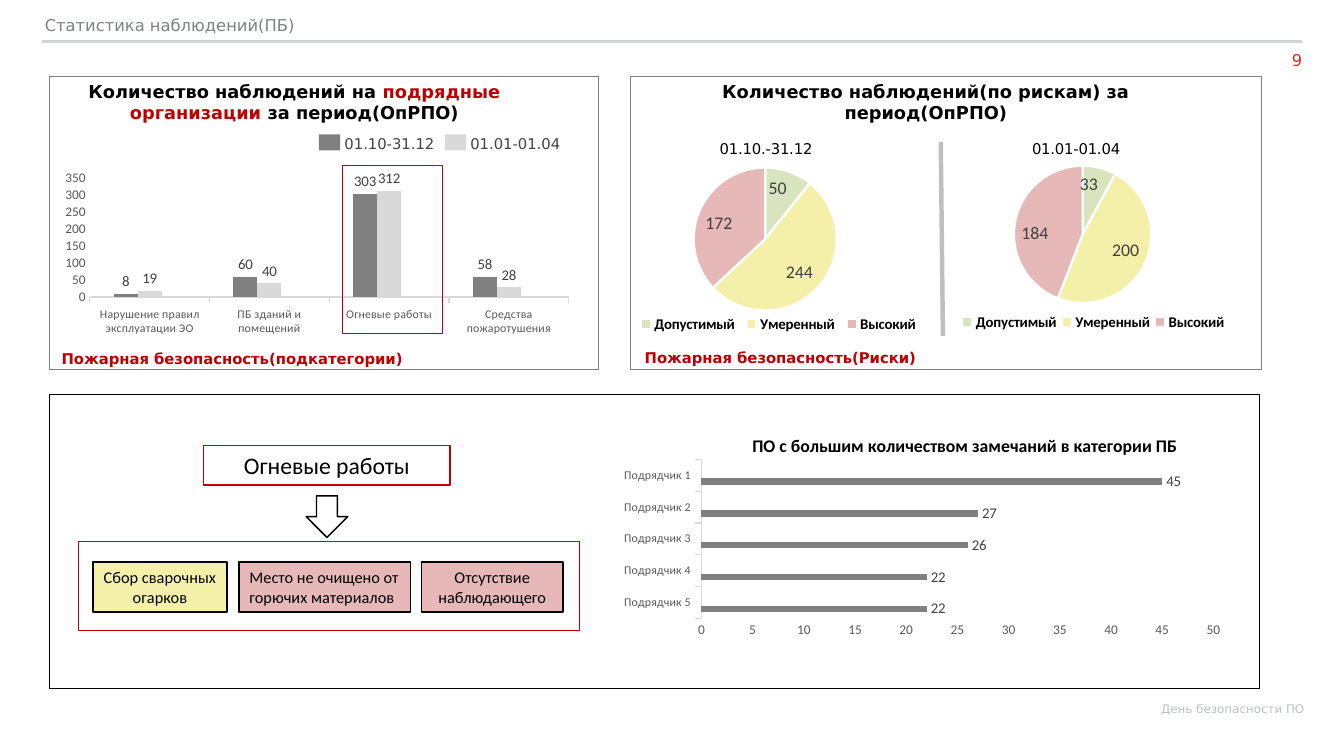
from pptx import Presentation
from pptx.chart.data import CategoryChartData
from pptx.dml.color import RGBColor
from pptx.enum.chart import XL_CHART_TYPE, XL_LABEL_POSITION, XL_LEGEND_POSITION, XL_TICK_MARK
from pptx.enum.shapes import MSO_CONNECTOR, MSO_SHAPE
from pptx.enum.text import MSO_ANCHOR, MSO_AUTO_SIZE, PP_ALIGN
from pptx.oxml import parse_xml
from pptx.oxml.ns import nsdecls, qn
from pptx.util import Inches, Pt

COLUMN, BAR, PIE = XL_CHART_TYPE.COLUMN_CLUSTERED, XL_CHART_TYPE.BAR_CLUSTERED, XL_CHART_TYPE.PIE
OUTSIDE_END, INSIDE_END = XL_LABEL_POSITION.OUTSIDE_END, XL_LABEL_POSITION.INSIDE_END
LEGEND_BOTTOM = XL_LEGEND_POSITION.BOTTOM
TICK_OUT, TICK_NONE = XL_TICK_MARK.OUTSIDE, XL_TICK_MARK.NONE
RECTANGLE, DOWN_ARROW = MSO_SHAPE.RECTANGLE, MSO_SHAPE.DOWN_ARROW
STRAIGHT = MSO_CONNECTOR.STRAIGHT
TOP, MIDDLE = MSO_ANCHOR.TOP, MSO_ANCHOR.MIDDLE
LEFT, CENTER, RIGHT = PP_ALIGN.LEFT, PP_ALIGN.CENTER, PP_ALIGN.RIGHT

SANS, BODY = "DejaVu Sans", "Calibri"
COLORS = {
    "black": "000000", "white": "FFFFFF", "red": "C00000", "number": "E92721",
    "heading": "7F8183", "footer": "BFC0C1", "rule": "D1D5DA", "divider": "BFBFBF",
    "dark": "808080", "light": "D9D9D9", "legend": "424242", "label": "404040",
    "axis": "595959", "green": "D7E4BD", "yellow": "F4F0AA", "pink": "E6B9B8",
}
RISKS = {"Допустимый": "green", "Умеренный": "yellow", "Высокий": "pink"}


def rgb(name):
    return RGBColor.from_string(COLORS[name])


def style_font(font, size, color, name=BODY, bold=False):
    font.size, font.name, font.bold = Pt(size), name, bold
    font.color.rgb = rgb(color)


def fill_text(frame, spans, size, font=SANS, bold=False, align=LEFT, anchor=TOP):
    """Write (text, colour) spans as one paragraph."""
    frame.word_wrap = True
    frame.auto_size = MSO_AUTO_SIZE.NONE
    frame.vertical_anchor = anchor
    para = frame.paragraphs[0]
    para.alignment = align
    for text, color in spans:
        span = para.add_run()
        span.text = text
        style_font(span.font, size, color, font, bold)


def add_text(page, place, spans, size, inset=True, **style):
    frame = page.shapes.add_textbox(*map(Inches, place)).text_frame
    if not inset:
        frame.margin_left = frame.margin_right = frame.margin_top = frame.margin_bottom = 0
    fill_text(frame, spans, size, **style)
    return frame


def add_box(page, place, fill=None, line=None, width=1, kind=RECTANGLE):
    box = page.shapes.add_shape(kind, *map(Inches, place))
    box.shadow.inherit = False
    if fill:
        box.fill.solid()
        box.fill.fore_color.rgb = rgb(fill)
    else:
        box.fill.background()
    if line:
        box.line.color.rgb = rgb(line)
        box.line.width = Pt(width)
    else:
        box.line.fill.background()
    return box


def add_line(page, start, end, color, width):
    line = page.shapes.add_connector(STRAIGHT, *map(Inches, start + end))
    line.line.color.rgb = rgb(color)
    line.line.width = Pt(width)
    line._element.spPr.append(parse_xml(f"<a:effectLst {nsdecls('a')}/>"))


def set_layout(element, inner=False, **fractions):
    """Place a chart part by x, y, w, h as fractions of the chart."""
    for old in element.findall(qn("c:layout")):
        element.remove(old)
    target = '<c:layoutTarget val="inner"/>' if inner else ""
    modes = "".join(f'<c:{key}Mode val="edge"/>' for key in "xy")
    values = "".join(f'<c:{key} val="{value}"/>' for key, value in fractions.items())
    layout = parse_xml(f"<c:layout {nsdecls('c')}><c:manualLayout>{target}{modes}{values}"
                       "</c:manualLayout></c:layout>")
    leading = [child for child in element if child.tag in (qn("c:tx"), qn("c:legendPos"))]
    element.insert(len(leading), layout)


def add_chart(page, kind, place, categories, series, plot):
    data = CategoryChartData()
    data.categories = categories
    for number, values in enumerate(series, 1):
        data.add_series(f"Series {number}", values)
    chart = page.shapes.add_chart(kind, *map(Inches, place), data).chart
    style_font(chart.font, 10, "black")
    chart.has_legend = chart.has_title = False
    area = chart.element.xpath("c:chart/c:plotArea")[0]
    set_layout(area, inner=True, **dict(zip("xywh", plot)))
    return chart


def add_chart_title(chart, text, size, x, y, font=BODY, bold=False):
    frame = chart.chart_title.text_frame
    frame.text = text
    style_font(frame.paragraphs[0].runs[0].font, size, "black", font, bold)
    set_layout(chart.element.xpath("c:chart/c:title")[0], x=x, y=y)


def label_values(plot, size, position):
    plot.has_data_labels = True
    labels = plot.data_labels
    labels.show_value = True
    labels.position = position
    style_font(labels.font, size, "label")


def add_bars(page, kind, place, categories, series, colors, plot, top, step):
    """Add a bar or column chart; series without values keep their place in each group."""
    chart = add_chart(page, kind, place, categories, series, plot)
    bars = chart.plots[0]
    bars.gap_width, bars.vary_by_categories = 199, False
    label_values(bars, 10, OUTSIDE_END)
    for one_series, color in zip(bars.series, colors):
        one_series.format.fill.solid()
        one_series.format.fill.fore_color.rgb = rgb(color)
        one_series.invert_if_negative = False
    names, scale = chart.category_axis, chart.value_axis
    style_font(names.tick_labels.font, 8, "axis")
    names.major_tick_mark = TICK_OUT
    names.format.line.color.rgb = rgb("light")
    names.format.line.width = Pt(0.75)
    style_font(scale.tick_labels.font, 9, "axis")
    scale.has_major_gridlines = False
    scale.major_tick_mark = TICK_NONE
    scale.format.line.fill.background()
    scale.minimum_scale, scale.maximum_scale, scale.major_unit = 0, top, step
    return chart


def add_risk_pie(page, place, period, values, plot, title_x):
    chart = add_chart(page, PIE, place, list(RISKS), [values], plot)
    add_chart_title(chart, period, 10, title_x, 0.09, SANS)
    pie = chart.plots[0]
    pie.vary_by_categories = True
    label_values(pie, 12, INSIDE_END)
    for index, color in enumerate(RISKS.values()):
        form = pie.series[0].points[index].format
        form.fill.solid()
        form.fill.fore_color.rgb = rgb(color)
        form.line.color.rgb = rgb("white")
        form.line.width = Pt(1.5)
    chart.has_legend = True
    chart.legend.position = LEGEND_BOTTOM
    chart.legend.include_in_layout = False
    style_font(chart.legend.font, 10, "black", bold=True)
    set_layout(chart.legend._element, x=0.1, y=0.82, w=0.87, h=0.08)


def add_frame(page):
    title = page.shapes.title
    title.left, title.top, title.width, title.height = map(Inches, (0.32, 0.09, 4.69, 0.3))
    fill_text(title.text_frame, [("Статистика наблюдений(ПБ)", "heading")], 11)
    add_line(page, (0.39, 0.39), (12.21, 0.39), "rule", 1.5)
    add_text(page, (11.48, 0.41, 0.73, 0.3), [("9", "number")], 11, inset=False,
             align=RIGHT, anchor=MIDDLE)
    add_text(page, (10.48, 6.53, 1.85, 0.39), [("День безопасности ПО", "footer")], 8, align=RIGHT)


def add_panel(page, place, heading_place, heading, caption_place, caption):
    add_box(page, place, line="dark", width=0.25)
    add_text(page, heading_place, heading, 12, bold=True, align=CENTER)
    add_text(page, caption_place, [(caption, "red")], 10, inset=False, bold=True, align=CENTER)


def add_contractors(page):
    add_panel(page, (0.46, 0.71, 5.15, 2.75), (0.32, 0.71, 4.88, 0.5),
              [("Количество наблюдений на ", "black"), ("подрядные организации ", "red"),
               ("за период(ОпРПО)", "black")],
              (0.3, 3.28, 3.75, 0.17), "Пожарная безопасность(подкатегории)")
    categories = ["Нарушение правил эксплуатации ЭО", "ПБ зданий и помещений",
                  "Огневые работы", "Средства пожаротушения"]
    add_bars(page, COLUMN, (0.55, 1.26, 4.88, 1.89), categories,
             [(8, 60, 303, 58), (19, 40, 312, 28), (None,) * 4],
             ("dark", "light", "green"), (0.06, 0.22, 0.92, 0.6), 350, 50)
    for left, color, period in ((2.99, "dark", "01.10-31.12"), (4.17, "light", "01.01-01.04")):
        add_box(page, (left, 1.26, 0.2, 0.15), fill=color)
        label = add_text(page, (left + 0.24, 1.26, 0.9, 0.17), [(period, "legend")], 10,
                         inset=False, anchor=MIDDLE)
        label.word_wrap = False
    add_box(page, (3.21, 1.55, 0.94, 1.58), line="red", width=0.5)


def add_risks(page):
    add_panel(page, (5.91, 0.71, 5.91, 2.75), (6.02, 0.71, 5.32, 0.5),
              [("Количество наблюдений(по рискам) за период(ОпРПО)", "black")],
              (5.78, 3.27, 3.07, 0.17), "Пожарная безопасность(Риски)")
    add_risk_pie(page, (5.63, 1.08, 3.12, 2.28), "01.10.-31.12", (50, 244, 172),
                 (0.28, 0.21, 0.43, 0.6), 0.35)
    add_risk_pie(page, (8.68, 1.08, 2.94, 2.26), "01.01-01.04", (33, 200, 184),
                 (0.28, 0.21, 0.44, 0.57), 0.33)
    add_line(page, (8.82, 1.33), (8.84, 3.15), "divider", 3)


def add_hot_work(page):
    add_box(page, (0.46, 3.7, 11.35, 2.76), line="black", width=0.5)
    topic = add_box(page, (1.91, 4.18, 2.31, 0.37), line="red")
    fill_text(topic.text_frame, [("Огневые работы", "black")], 16, BODY, align=CENTER)
    add_box(page, (2.87, 4.65, 0.39, 0.39), line="black", kind=DOWN_ARROW)
    add_box(page, (0.74, 5.08, 4.69, 0.83), line="red", width=0.75)
    remarks = ((0.87, 1.26, "yellow", CENTER, "Сбор сварочных огарков"),
               (2.24, 1.61, "pink", LEFT, "Место не очищено от горючих материалов"),
               (3.95, 1.33, "pink", CENTER, "Отсутствие наблюдающего"))
    for left, width, color, align, text in remarks:
        box = add_box(page, (left, 5.27, width, 0.47), fill=color, line="black")
        fill_text(box.text_frame, [(text, "black")], 11, BODY, align=align, anchor=MIDDLE)
    contractors = ["Подрядчик 5", "Подрядчик 4", "Подрядчик 3", "Подрядчик 2", "Подрядчик 1"]
    chart = add_bars(page, BAR, (5.85, 3.88, 5.59, 2.26), contractors,
                     [(22, 22, 26, 27, 45), (None,) * 5, (None,) * 5],
                     ("dark", "red", "green"), (0.13, 0.19, 0.86, 0.66), 50, 5)
    add_chart_title(chart, "ПО с большим количеством замечаний в категории ПБ", 12,
                    0.21, 0.07, bold=True)


def main():
    deck = Presentation()
    deck.slide_width, deck.slide_height = Inches(12.6), Inches(7.09)
    page = deck.slides.add_slide(deck.slide_layouts[5])
    add_frame(page)
    add_contractors(page)
    add_risks(page)
    add_hot_work(page)
    deck.save("out.pptx")


if __name__ == "__main__":
    main()
